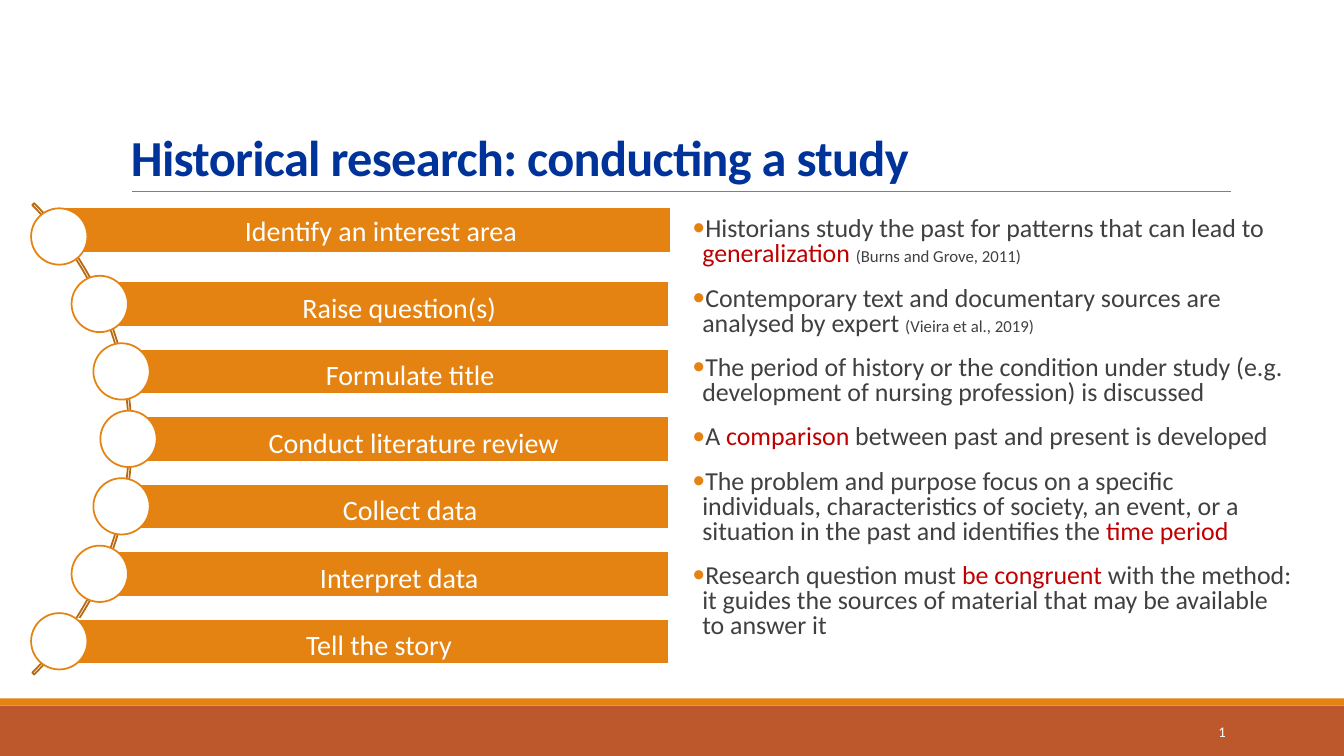
import math

from lxml import etree
from pptx import Presentation
from pptx import util as u
from pptx.dml.color import RGBColor
from pptx.enum import shapes, text
from pptx.oxml.ns import qn

ORANGE, RUST, WHITE = "E48312", "BD582C", "FFFFFF"
DARK, RED, NAVY = "404040", "C00000", "003399"

STEPS = ["Identify an interest area", "Raise question(s)", "Formulate title",
         "Conduct literature review", "Collect data", "Interpret data",
         "Tell the story"]

PLAIN, KEY, CITE = {}, {"color": RED}, {"size": 12}
POINTS = [
    [("Historians study the past for patterns that can lead to ", PLAIN),
     ("generalization ", KEY), ("(Burns and Grove, 2011)", CITE)],
    [("Contemporary text and documentary sources are analysed by expert ", PLAIN),
     ("(Vieira et al., 2019)", CITE)],
    [("The period of history or the condition under study (e.g. development "
      "of nursing profession) is discussed", PLAIN)],
    [("A ", PLAIN), ("comparison", KEY),
     (" between past and present is developed", PLAIN)],
    [("The problem and purpose focus on a specific individuals, characteristics "
      "of society, an event, or a situation in the past and identifies the ", PLAIN),
     ("time period", KEY)],
    [("Research question must ", PLAIN), ("be congruent ", KEY),
     ("with the method: it guides the sources of material that may be "
      "available to answer it", PLAIN)],
]


def rgb(value):
    return RGBColor.from_string(value)


def add_span(para, words, size=18.5, color=DARK, bold=False, spacing=None):
    span = para.add_run()
    span.text = words
    span.font.name = "Calibri"
    span.font.size = u.Pt(size)
    span.font.bold = bold
    span.font.color.rgb = rgb(color)
    if spacing is not None:
        span._r.get_or_add_rPr().set("spc", str(int(spacing * 100)))
    return span


def set_frame(frame, anchor, insets=(0.25, 0.13, 0.25, 0.13)):
    frame.word_wrap = True
    frame.auto_size = text.MSO_AUTO_SIZE.NONE
    frame.vertical_anchor = anchor
    (frame.margin_left, frame.margin_top,
     frame.margin_right, frame.margin_bottom) = map(u.Cm, insets)


def add_shape(page, kind, box, fill=None, line=None):
    shape = page.shapes.add_shape(kind, *map(u.Cm, box))
    shape.shadow.inherit = False
    if fill:
        shape.fill.solid()
        shape.fill.fore_color.rgb = rgb(fill)
    else:
        shape.fill.background()
    if line:
        shape.line.color.rgb = rgb(line)
        shape.line.width = u.Pt(1.25)
    else:
        shape.line.fill.background()
    return shape


def add_title(page, box):
    title = page.shapes.title
    title.left, title.top, title.width, title.height = map(u.Cm, box)
    set_frame(title.text_frame, text.MSO_ANCHOR.BOTTOM)
    para = title.text_frame.paragraphs[0]
    para.alignment = text.PP_ALIGN.LEFT
    para.line_spacing = 0.85
    add_span(para, "Historical research: conducting a study",
             size=36, color=NAVY, bold=True, spacing=-0.5)

    # Rule under the title
    left, top, width, height = box
    base = top + height
    rule = page.shapes.add_connector(
        shapes.MSO_CONNECTOR.STRAIGHT, u.Cm(left + 0.28), u.Cm(base),
        u.Cm(left + width + 0.03), u.Cm(base))
    rule.line.color.rgb = rgb("808080")
    rule.line.width = u.Pt(0.5)
    etree.SubElement(rule._element.spPr, qn("a:effectLst"))


def add_footer(page, box):
    left, top, width, height = box
    stripe = 0.18
    rect = shapes.MSO_SHAPE.RECTANGLE
    add_shape(page, rect, (left, top + stripe, width, height - stripe), RUST)
    add_shape(page, rect, (left, top, width, stripe), ORANGE)

    # Slide number field
    number = page.shapes.add_textbox(
        u.Cm(left + 27.5), u.Cm(top + 0.33), u.Cm(3.64), u.Cm(1.01))
    set_frame(number.text_frame, text.MSO_ANCHOR.MIDDLE)
    para = number.text_frame.paragraphs[0]
    para.alignment = text.PP_ALIGN.RIGHT
    field = add_span(para, "5", size=10.5, color=WHITE)._r
    field.tag = qn("a:fld")
    field.set("id", "{B6F15528-21DE-4FAA-801E-634DDDAF4B2B}")
    field.set("type", "slidenum")


def add_steps(page, box):
    left, top, width, height = box
    middle = top + height / 2
    arc_x, radius, outer = left - 5.84, 8.32, 8.4
    pitch, dot, bar = 1.7, 1.42, 1.14

    # Arc that carries the dots
    arc = add_shape(page, shapes.MSO_SHAPE.BLOCK_ARC,
                    (arc_x - outer, middle - outer, 2 * outer, 2 * outer),
                    line="B7690E")
    for index, value in enumerate((189, 27, 0.004)):
        arc.adjustments[index] = value

    # One bar and one dot per step
    for index, step in enumerate(STEPS):
        offset = (index - (len(STEPS) - 1) / 2) * pitch
        x = arc_x + math.sqrt(radius ** 2 - offset ** 2)
        y = middle + offset
        first = index == 0
        shift, lift, drop = (0.05, 0.16, 0) if first else (0, 0, 0.15)
        strip = add_shape(
            page, shapes.MSO_SHAPE.RECTANGLE,
            (x + shift, y - bar / 2 - lift, left + width + shift - x - shift, bar),
            ORANGE, WHITE)
        set_frame(strip.text_frame, text.MSO_ANCHOR.MIDDLE, (0.89, drop, 0.15, 0))
        para = strip.text_frame.paragraphs[0]
        para.alignment = text.PP_ALIGN.CENTER
        add_span(para, step, size=20, color=WHITE)
        add_shape(page, shapes.MSO_SHAPE.OVAL,
                  (x - dot / 2, y - dot / 2, dot, dot), WHITE, ORANGE)


def add_bullet(para):
    props = para._p.get_or_add_pPr()
    props.set("marL", str(u.Cm(0.25)))
    props.set("indent", str(-u.Cm(0.25)))
    color = etree.SubElement(props, qn("a:buClr"))
    etree.SubElement(color, qn("a:srgbClr"), val=ORANGE)
    etree.SubElement(props, qn("a:buFont"), typeface="Calibri")
    etree.SubElement(props, qn("a:buChar"), char="•")


def add_points(page, box):
    frame = page.shapes.add_textbox(*map(u.Cm, box)).text_frame
    set_frame(frame, text.MSO_ANCHOR.TOP, (0, 0.13, 0, 0.13))
    for index, point in enumerate(POINTS):
        para = frame.add_paragraph() if index else frame.paragraphs[0]
        para.line_spacing = 0.8
        para.space_before = u.Pt(12)
        para.space_after = u.Pt(2)
        add_bullet(para)
        for words, style in point:
            add_span(para, words, **style)


def main():
    deck = Presentation()
    deck.slide_width, deck.slide_height = u.Cm(33.87), u.Cm(19.05)
    page = deck.slides.add_slide(deck.slide_layouts[5])
    add_footer(page, (0, 17.6, 33.87, 1.45))
    add_title(page, (3.05, 0.79, 27.94, 4.04))
    add_points(page, (17.45, 5.36, 15.09, 12.09))
    add_steps(page, (0.76, 5.12, 16.11, 11.88))
    deck.save("out.pptx")


if __name__ == "__main__":
    main()
